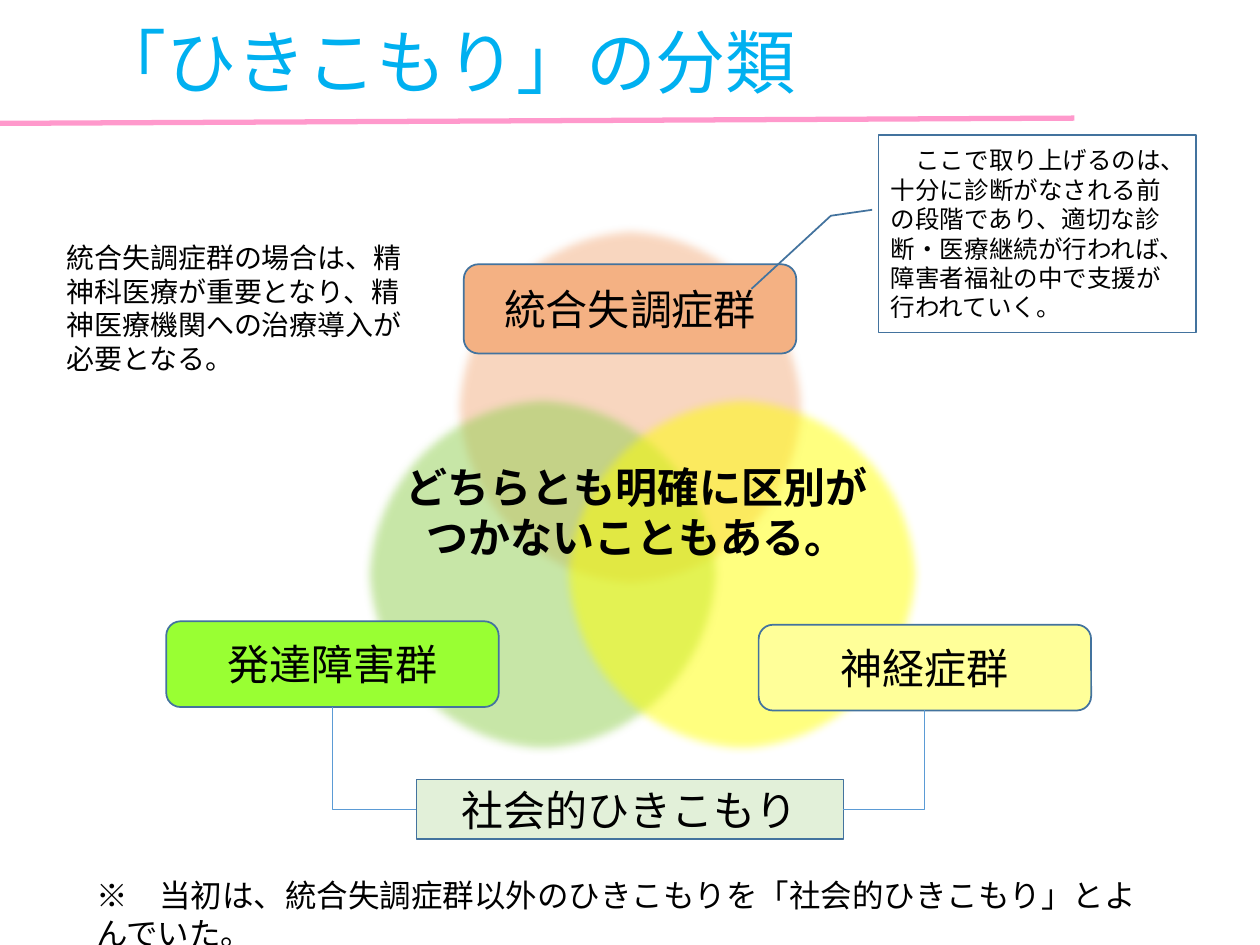
"""Build the slide on the classification of hikikomori."""
from lxml import etree
from pptx import Presentation
from pptx.dml.color import RGBColor
from pptx.enum.shapes import MSO_CONNECTOR, MSO_SHAPE
from pptx.enum.text import MSO_ANCHOR, MSO_AUTO_SIZE, PP_ALIGN
from pptx.oxml.ns import qn
from pptx.util import Pt

FONT = "Noto Sans CJK JP"
OVAL, RECT, ROUND = MSO_SHAPE.OVAL, MSO_SHAPE.RECTANGLE, MSO_SHAPE.ROUNDED_RECTANGLE
CALLOUT = MSO_SHAPE.LINE_CALLOUT_2
STRAIGHT, ELBOW = MSO_CONNECTOR.STRAIGHT, MSO_CONNECTOR.ELBOW
LEFT, CENTER = PP_ALIGN.LEFT, PP_ALIGN.CENTER
TOP, MIDDLE = MSO_ANCHOR.TOP, MSO_ANCHOR.MIDDLE
NO_FIT = MSO_AUTO_SIZE.NONE
rgb = RGBColor.from_string


def write(sp, text, size, align=LEFT, anchor=MIDDLE, color="000000", bold=False):
    tf = sp.text_frame
    tf.text = text
    tf.word_wrap = True
    tf.auto_size = NO_FIT
    tf.vertical_anchor = anchor
    for p in tf.paragraphs:
        p.alignment = align
        p.font.size = Pt(size)
        p.font.bold = bold
        p.font.color.rgb = rgb(color)
        p.font.name = FONT
        props = p._p.pPr.find(qn("a:defRPr"))
        etree.SubElement(props, qn("a:ea"), typeface=FONT)


def add_box(kind, box, fill, line=None):
    sp = s.shapes.add_shape(kind, *map(Pt, box))
    sp.shadow.inherit = False
    sp.fill.solid()
    sp.fill.fore_color.rgb = rgb(fill)
    if line:
        sp.line.color.rgb = rgb(line)
        sp.line.width = Pt(1)
    else:
        sp.line.fill.background()
    return sp


prs = Presentation()
prs.slide_width, prs.slide_height = Pt(720), Pt(540)
s = prs.slides.add_slide(prs.slide_layouts[5])

title = s.shapes.title
title.left, title.top, title.width, title.height = map(Pt, (48, 0, 493, 69))
write(title, "「ひきこもり」の分類", 40, color="00B0F0")

rule = s.shapes.add_connector(STRAIGHT, Pt(0), Pt(70.5), Pt(614), Pt(67.5))
rule.line.color.rgb = rgb("FF99CC")
rule.line.width = Pt(3)
etree.SubElement(rule._element.spPr, qn("a:effectLst"))

for box, fill in [
    ((258, 128, 204, 209.5), "F4B183"),
    ((206.5, 224.5, 207, 207.5), "92D050"),
    ((320.5, 224.5, 207, 207.5), "FFFF00"),
]:
    sp = add_box(OVAL, box, fill)
    props = sp._element.spPr
    color = props.find(qn("a:solidFill")).find(qn("a:srgbClr"))
    etree.SubElement(color, qn("a:alpha"), val="50000")
    effects = props.find(qn("a:effectLst"))
    etree.SubElement(effects, qn("a:softEdge"), rad=str(Pt(5)))

labels = []
for kind, box, fill, text in [
    (ROUND, (265, 151, 190, 51), "F4B183", "統合失調症群"),
    (ROUND, (95, 355, 190, 49), "99FF33", "発達障害群"),
    (ROUND, (433.5, 357, 190, 49), "FFFF99", "神経症群"),
    (RECT, (238, 445.5, 244, 34), "E2F0D9", "社会的ひきこもり"),
]:
    sp = add_box(kind, box, fill, "43739E")
    write(sp, text, 24, CENTER)
    labels.append(sp)

schizo, developmental, neurotic, social = labels
for group, side in [(developmental, 1), (neurotic, 3)]:
    c = s.shapes.add_connector(ELBOW, 0, 0, 0, 0)
    c.begin_connect(social, side)
    c.end_connect(group, 2)
    c._element.spPr.find(qn("a:prstGeom")).set("prst", "bentConnector2")
    c.line.color.rgb = rgb("5B9BD5")
    c.line.width = Pt(0.5)
    etree.SubElement(c._element.spPr, qn("a:effectLst"))

for box, text, size, align, anchor, bold in [
    ((48, 497, 623.5, 29), "※　当初は、統合失調症群以外のひきこもりを「社会的ひきこもり」とよんでいた。",
     18, LEFT, TOP, False),
    ((196, 258.5, 335, 68), "どちらとも明確に区別が\nつかないこともある。", 24, CENTER, MIDDLE, True),
    ((31, 134, 215, 85), "統合失調症群の場合は、精神科医療が重要となり、精神医療機関への治療導入が必要となる。",
     16, LEFT, TOP, False),
]:
    sp = s.shapes.add_textbox(*map(Pt, box))
    write(sp, text, size, align, anchor, bold=bold)

callout = add_box(CALLOUT, (502, 77, 181.5, 113), "FFFFFF", "43739E")
for i, value in enumerate((0.38, -0.02, 0.41, -0.15, 0.78, -0.4)):
    callout.adjustments[i] = value
write(callout, "　ここで取り上げるのは、十分に診断がなされる前の段階であり、適切な診断・医療継続が行われば、"
      "障害者福祉の中で支援が行われていく。", 14)

prs.save("out.pptx")
